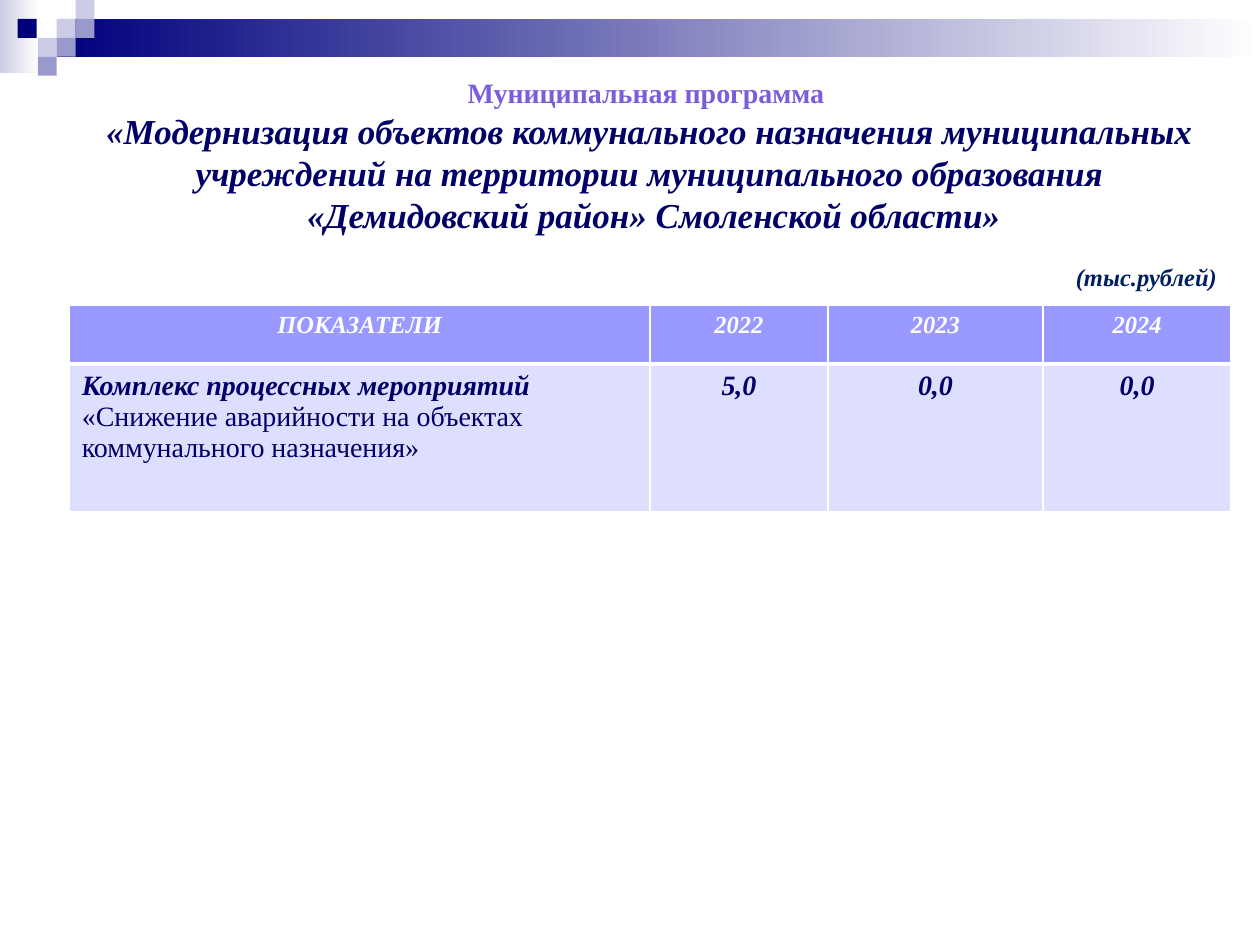
from dataclasses import dataclass

from lxml import etree
from pptx import Presentation
from pptx import util as u
from pptx.dml.color import RGBColor
from pptx.enum import shapes, text
from pptx.oxml import ns

FONT = "Times New Roman"
NAVY, WHITE = "000066", "FFFFFF"
DARK, MID, PALE = "00007D", "9999CC", "CCCCE6"
SIDE = 0.15


@dataclass
class Block:
    left: float
    top: float
    width: float
    height: float
    color: str
    fade: str | None = None


BANDS = [
    Block(0, 0, 0.31, 0.58, PALE, WHITE),
    Block(0.45, 0.15, 9.55, 0.3, DARK, WHITE),
]
SQUARES = [
    Block(left, top, SIDE, SIDE, color)
    for left, top, color in [
        (0.45, 0.15, PALE), (0.6, 0, PALE), (0.6, 0.15, MID), (0.3, 0.3, PALE),
        (0.14, 0.15, DARK), (0.45, 0.3, MID), (0.3, 0.45, MID),
    ]
]
TITLE = [
    ("Муниципальная программа ", 16, "7D5CDA", False),
    ("«Модернизация объектов коммунального назначения муниципальных "
     "учреждений на территории муниципального образования", 20, NAVY, True),
    (" «Демидовский район» Смоленской области»", 20, NAVY, True),
]
COLUMNS = [4.61, 1.41, 1.71, 1.49]
ROWS = [0.47, 1.17]
HEADER = ["ПОКАЗАТЕЛИ", "2022", "2023", "2024"]
VALUES = ["5,0", "0,0", "0,0"]


def rgb(color: str) -> RGBColor:
    return RGBColor.from_string(color)


def style(font, size: float, color: str, bold: bool = True, italic: bool = True) -> None:
    font.name, font.size = FONT, u.Pt(size)
    font.bold, font.italic = bold, italic
    font.color.rgb = rgb(color)


def draw_block(page, block: Block) -> None:
    box = page.shapes.add_shape(
        shapes.MSO_SHAPE.RECTANGLE, u.Inches(block.left), u.Inches(block.top),
        u.Inches(block.width), u.Inches(block.height))
    box.shadow.inherit = False
    box.line.fill.background()
    if block.fade is None:
        box.fill.solid()
        box.fill.fore_color.rgb = rgb(block.color)
        return
    box.fill.gradient()
    box.fill.gradient_angle = 0
    for stop, color in zip(box.fill.gradient_stops, (block.color, block.fade)):
        stop.color.rgb = rgb(color)


def draw_title(page) -> None:
    box = page.shapes.title
    box.left, box.top = u.Inches(0.31), u.Inches(0.55)
    box.width, box.height = u.Inches(9.69), u.Inches(1.38)
    frame = box.text_frame
    frame.word_wrap = True
    frame.auto_size = text.MSO_AUTO_SIZE.SHAPE_TO_FIT_TEXT
    frame.vertical_anchor = text.MSO_ANCHOR.TOP
    for index, (words, size, color, italic) in enumerate(TITLE):
        para = frame.paragraphs[0] if index == 0 else frame.add_paragraph()
        para.text = words
        para.alignment = text.PP_ALIGN.CENTER
        style(para.font, size, color, italic=italic)


def draw_unit(page) -> None:
    box = page.shapes.add_textbox(
        u.Inches(8.44), u.Inches(2.03), u.Inches(1.33), u.Inches(0.34))
    frame = box.text_frame
    frame.word_wrap = False
    frame.auto_size = text.MSO_AUTO_SIZE.SHAPE_TO_FIT_TEXT
    para = frame.paragraphs[0]
    para.text = "(тыс.рублей)"
    style(para.font, 14, "002060")


def set_borders(cell, bottom: float) -> None:
    """Give the cell white 1 pt edges, with its own bottom width in points."""
    properties = cell._tc.get_or_add_tcPr()
    widths = {"a:lnL": 1, "a:lnR": 1, "a:lnT": 1, "a:lnB": bottom}
    for index, (tag, width) in enumerate(widths.items()):
        line = etree.Element(ns.qn(tag), w=str(u.Pt(width)))
        fill = etree.SubElement(line, ns.qn("a:solidFill"))
        etree.SubElement(fill, ns.qn("a:srgbClr"), val=WHITE)
        properties.insert(index, line)


def fill_cell(cell, words: str, size: float, color: str, back: str, bottom: float) -> None:
    cell.fill.solid()
    cell.fill.fore_color.rgb = rgb(back)
    set_borders(cell, bottom)
    para = cell.text_frame.paragraphs[0]
    para.text = words
    para.alignment = text.PP_ALIGN.CENTER
    style(para.font, size, color)


def draw_table(page) -> None:
    table = page.shapes.add_table(
        len(ROWS), len(COLUMNS), u.Inches(0.55), u.Inches(2.42),
        u.Inches(sum(COLUMNS)), u.Inches(sum(ROWS))).table
    for column, width in zip(table.columns, COLUMNS):
        column.width = u.Inches(width)
    for row, height in zip(table.rows, ROWS):
        row.height = u.Inches(height)
    for index, words in enumerate(HEADER):
        fill_cell(table.cell(0, index), words, 14, WHITE, "9999FF", 3)
    for index, words in enumerate(["Комплекс процессных мероприятий ", *VALUES]):
        fill_cell(table.cell(1, index), words, 16, NAVY, "DEDEFF", 1)

    para = table.cell(1, 0).text_frame.paragraphs[0]
    para.alignment = text.PP_ALIGN.LEFT
    span = para.add_run()
    span.text = "«Снижение аварийности на объектах коммунального назначения»"
    span.font.bold = span.font.italic = False


def main() -> None:
    deck = Presentation()
    deck.slide_width, deck.slide_height = u.Inches(10), u.Inches(7.5)
    page = deck.slides.add_slide(deck.slide_layouts.get_by_name("Title Only"))
    for block in BANDS + SQUARES:
        draw_block(page, block)
    draw_title(page)
    draw_table(page)
    draw_unit(page)
    deck.save("out.pptx")


if __name__ == "__main__":
    main()
